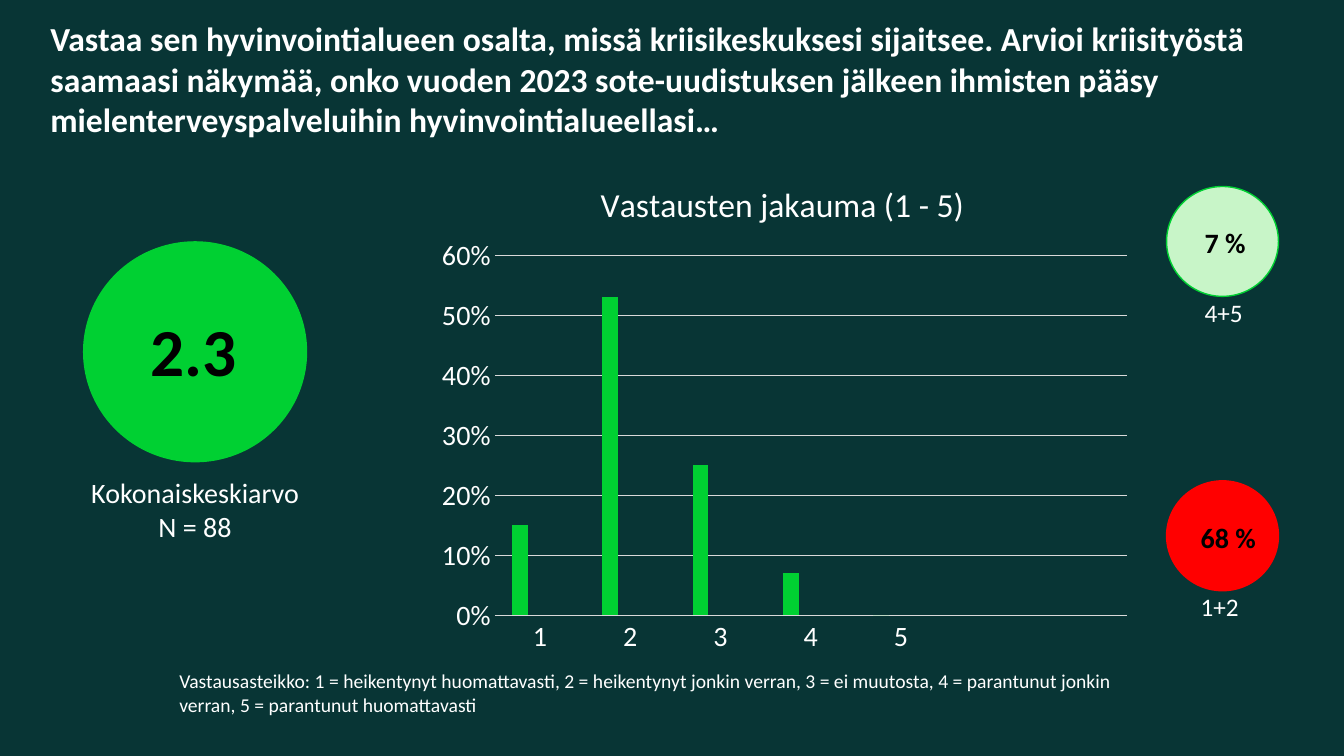
from lxml import etree
from pptx import Presentation
from pptx.chart.data import CategoryChartData
from pptx.dml.color import RGBColor
from pptx.enum.chart import XL_CHART_TYPE, XL_TICK_MARK
from pptx.enum.shapes import MSO_SHAPE
from pptx.enum.text import MSO_ANCHOR, MSO_AUTO_SIZE, PP_ALIGN
from pptx.oxml.ns import qn
from pptx.util import Inches, Pt

COLUMNS = XL_CHART_TYPE.COLUMN_CLUSTERED
NO_TICK = XL_TICK_MARK.NONE
ELLIPSE = MSO_SHAPE.OVAL
TOP = MSO_ANCHOR.TOP
FIXED_SIZE = MSO_AUTO_SIZE.NONE
LEFT, CENTER = PP_ALIGN.LEFT, PP_ALIGN.CENTER

FONT = "Calibri"
COLORS = {
    "background": "083535",
    "white": "FFFFFF",
    "black": "000000",
    "green": "00D032",
    "dark green": "19413D",
    "pale green": "C8F5C8",
    "red": "FF0000",
    "grid": "D9D9D9",
}


def rgb(name):
    return RGBColor.from_string(COLORS[name])


def format_font(font, size, color="white", bold=False):
    font.name = FONT
    font.size = Pt(size)
    font.bold = bold
    font.color.rgb = rgb(color)


def write_text(frame, text, size, color="white", bold=False, align=LEFT):
    """Fill a text frame, one paragraph per line of text."""
    frame.word_wrap = True
    frame.auto_size = FIXED_SIZE
    frame.vertical_anchor = TOP
    frame.text = text
    for paragraph in frame.paragraphs:
        paragraph.alignment = align
        for run in paragraph.runs:
            format_font(run.font, size, color, bold)


class SlideBuilder:
    def __init__(self, slide):
        self.slide = slide
        fill = slide.background.fill
        fill.solid()
        fill.fore_color.rgb = rgb("background")

    def title(self, text, left, top, width, height):
        title = self.slide.shapes.title
        title.left, title.top = Inches(left), Inches(top)
        title.width, title.height = Inches(width), Inches(height)
        write_text(title.text_frame, text, 24, bold=True)

    def text(self, text, left, top, width, height, **style):
        box = self.slide.shapes.add_textbox(
            Inches(left), Inches(top), Inches(width), Inches(height))
        write_text(box.text_frame, text, **style)

    def circle(self, left, top, width, height, fill, line):
        shape = self.slide.shapes.add_shape(
            ELLIPSE, Inches(left), Inches(top), Inches(width), Inches(height))
        shape.shadow.inherit = False
        shape.fill.solid()
        shape.fill.fore_color.rgb = rgb(fill)
        shape.line.color.rgb = rgb(line)
        shape.line.width = Pt(1)

    def column_chart(self, title, categories, series, left, top, width, height):
        data = CategoryChartData(number_format="0.00%")
        data.categories = categories
        for name, values, _ in series:
            data.add_series(name, values)
        chart = self.slide.shapes.add_chart(
            COLUMNS, Inches(left), Inches(top), Inches(width), Inches(height),
            data).chart
        format_font(chart.font, 10, "black")
        chart.has_legend = False
        chart.has_title = True
        title_frame = chart.chart_title.text_frame
        title_frame.text = title
        format_font(title_frame.paragraphs[0].runs[0].font, 24)
        chart.chart_title.include_in_layout = False

        plot = chart.plots[0]
        plot.vary_by_categories = False
        plot.gap_width = 219
        plot.overlap = -27
        for column, (_, _, color) in zip(plot.series, series):
            column.format.fill.solid()
            column.format.fill.fore_color.rgb = rgb(color)
        self.format_axes(chart)
        self.place_plot(chart, x=0.095, y=0.19, w=0.89, h=0.72)

    def format_axes(self, chart):
        for axis in (chart.category_axis, chart.value_axis):
            axis.major_tick_mark = axis.minor_tick_mark = NO_TICK
            format_font(axis.tick_labels.font, 20)
        values = chart.value_axis
        values.minimum_scale, values.maximum_scale = 0, 0.6
        values.major_unit = 0.1
        values.tick_labels.number_format = "0%"
        values.tick_labels.number_format_is_linked = False
        values.format.line.fill.background()
        for line in (chart.category_axis.format.line,
                     values.major_gridlines.format.line):
            line.color.rgb = rgb("grid")
            line.width = Pt(0.75)

    def place_plot(self, chart, **fractions):
        """Fix the inner plot area as fractions of the chart."""
        area = chart.plots[0]._element.getparent()
        for old in area.findall(qn("c:layout")):
            area.remove(old)
        layout = etree.Element(qn("c:layout"))
        area.insert(0, layout)
        manual = etree.SubElement(layout, qn("c:manualLayout"))
        settings = {"layoutTarget": "inner", "xMode": "edge", "yMode": "edge"}
        for tag, value in {**settings, **fractions}.items():
            etree.SubElement(manual, qn(f"c:{tag}")).set("val", str(value))


def main():
    presentation = Presentation()
    presentation.slide_width = Inches(13.33)
    presentation.slide_height = Inches(7.5)
    title_only = presentation.slide_layouts[5]
    builder = SlideBuilder(presentation.slides.add_slide(title_only))

    builder.title(
        "Vastaa sen hyvinvointialueen osalta, missä kriisikeskuksesi sijaitsee. "
        "Arvioi kriisityöstä saamaasi näkymää, onko vuoden 2023 sote-uudistuksen "
        "jälkeen ihmisten pääsy mielenterveyspalveluihin hyvinvointialueellasi…",
        0.4, 0.13, 12.93, 1.09)

    # Overall average
    builder.circle(0.83, 2.4, 2.21, 2.18, "green", "green")
    builder.text("2.3", 1.39, 3.02, 1.08, 0.91,
                 size=48, color="black", bold=True)
    builder.text("Kokonaiskeskiarvo\nN = 88", 0.73, 4.67, 2.41, 0.77,
                 size=20, align=CENTER)

    # Distribution of answers
    categories = ["1", "2", "3", "4", "5", "", ""]
    empty = [None] * len(categories)
    series = [
        ("Series 1", [0.15, 0.53, 0.25, 0.07, 0, None, None], "green"),
        ("Series 2", empty, "dark green"),
        ("Series 3", empty, "pale green"),
    ]
    builder.column_chart("Vastausten jakauma (1 - 5)", categories, series,
                         4.24, 1.59, 7.04, 4.96)
    builder.text(
        "Vastausasteikko: 1 = heikentynyt huomattavasti, 2 = heikentynyt jonkin "
        "verran, 3 = ei muutosta, 4 = parantunut jonkin verran, 5 = parantunut "
        "huomattavasti", 1.68, 6.59, 9.6, 0.57, size=14)

    # Shares of positive and negative answers
    shares = [
        ("7 %", "4+5", 1.85, 11.85, "pale green", "green"),
        ("68 %", "1+2", 4.77, 11.81, "red", "red"),
    ]
    for share, answers, top, text_left, fill, line in shares:
        builder.circle(11.57, top, 1.11, 1.09, fill, line)
        builder.text(share, text_left, top + 0.34, 0.8, 0.44,
                     size=20, color="black", bold=True)
        builder.text(answers, text_left, top + 1.05, 0.93, 0.4, size=18)

    presentation.save("out.pptx")


if __name__ == "__main__":
    main()
